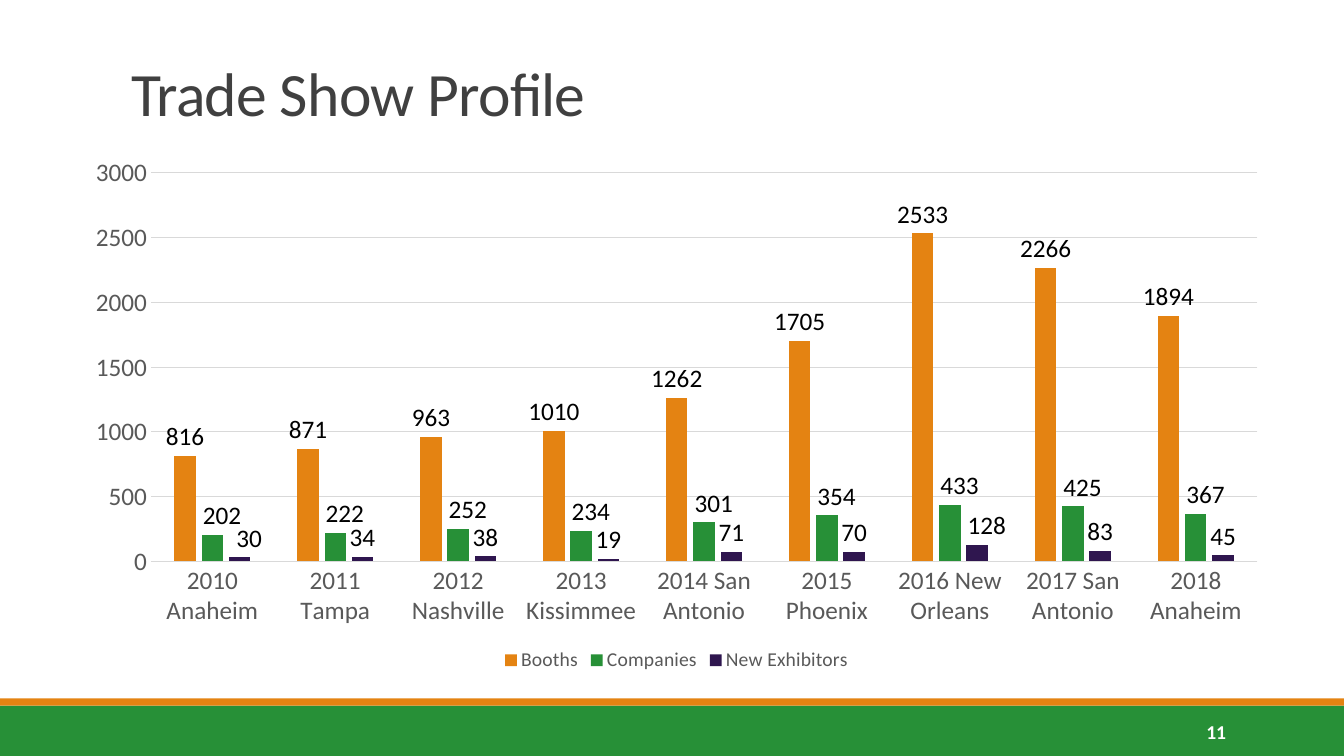
import pptx
import pptx.chart.data
import pptx.dml.color
import pptx.enum.chart
import pptx.enum.shapes
import pptx.enum.text
import pptx.oxml
import pptx.oxml.ns
import pptx.util
from pptx.util import Inches

COLORS = {
    "orange": "E48312",
    "green": "279037",
    "purple": "2F164F",
    "title": "404040",
    "axis": "595959",
    "grid": "D9D9D9",
    "label": "000000",
    "white": "FFFFFF",
}
FONT = "Calibri"
SHOWS = [
    "2010 Anaheim", "2011 Tampa", "2012 Nashville", "2013 Kissimmee", "2014 San Antonio",
    "2015 Phoenix", "2016 New Orleans", "2017 San Antonio", "2018 Anaheim",
]
SERIES = [
    ("Booths", [816, 871, 963, 1010, 1262, 1705, 2533, 2266, 1894], "orange", []),
    ("Companies", [202, 222, 252, 234, 301, 354, 433, 425, 367], "green", range(len(SHOWS))),
    ("New Exhibitors", [30, 34, 38, 19, 71, 70, 128, 83, 45], "purple", [0, 6]),
]
LABEL_SHIFT = 0.008


def rgb(name):
    """Return the named colour."""
    return pptx.dml.color.RGBColor.from_string(COLORS[name])


def style_font(font, size, color):
    """Set typeface, size and colour of a font."""
    font.name = FONT
    font.size = pptx.util.Pt(size)
    font.color.rgb = rgb(color)


def add_band(slide, left, top, width, height, color):
    """Draw one plain filled band."""
    band = slide.shapes.add_shape(
        pptx.enum.shapes.MSO_SHAPE.RECTANGLE,
        Inches(left), Inches(top), Inches(width), Inches(height))
    band.shadow.inherit = False
    band.fill.solid()
    band.fill.fore_color.rgb = rgb(color)
    band.line.fill.background()


def add_footer(slide, left, top, width, height, number):
    """Draw the two footer bands and the slide number."""
    stripe = 0.07
    add_band(slide, left, top + stripe, width, height - stripe, "green")
    add_band(slide, left, top, width, stripe, "orange")
    box = slide.shapes.add_textbox(
        Inches(left + width - 2.5), Inches(top + 0.13), Inches(1.43), Inches(0.4))
    frame = box.text_frame
    frame.word_wrap = True
    frame.vertical_anchor = pptx.enum.text.MSO_ANCHOR.MIDDLE
    paragraph = frame.paragraphs[0]
    paragraph.text = number
    paragraph.alignment = pptx.enum.text.PP_ALIGN.RIGHT
    style_font(paragraph.font, 14, "white")
    paragraph.font.bold = True


def add_title(slide, left, top, width, height, text):
    """Place and format the slide title."""
    title = slide.shapes.title
    title.left, title.top = Inches(left), Inches(top)
    title.width, title.height = Inches(width), Inches(height)
    frame = title.text_frame
    frame.auto_size = pptx.enum.text.MSO_AUTO_SIZE.NONE
    frame.vertical_anchor = pptx.enum.text.MSO_ANCHOR.BOTTOM
    paragraph = frame.paragraphs[0]
    paragraph.text = text
    paragraph.alignment = pptx.enum.text.PP_ALIGN.LEFT
    paragraph.line_spacing = 0.85
    style_font(paragraph.font, 44, "title")
    paragraph.runs[0].font._element.set("spc", "-50")


def style_axes(chart):
    """Format both axes and the gridlines."""
    for axis in (chart.category_axis, chart.value_axis):
        axis.major_tick_mark = pptx.enum.chart.XL_TICK_MARK.NONE
        axis.minor_tick_mark = pptx.enum.chart.XL_TICK_MARK.NONE
        style_font(axis.tick_labels.font, 18, "axis")
    chart.value_axis.minimum_scale = 0
    chart.value_axis.maximum_scale = 3000
    chart.value_axis.major_unit = 500
    chart.value_axis.has_major_gridlines = True
    chart.value_axis.format.line.fill.background()
    for line in (chart.category_axis.format.line,
                 chart.value_axis.major_gridlines.format.line):
        line.color.rgb = rgb("grid")
        line.width = pptx.util.Pt(0.75)


def style_series(series, color, shifted):
    """Colour a series, show its values and move the listed labels to the right."""
    outside_end = pptx.enum.chart.XL_LABEL_POSITION.OUTSIDE_END
    series.format.fill.solid()
    series.format.fill.fore_color.rgb = rgb(color)
    labels = series.data_labels
    labels.show_value = True
    labels.position = outside_end
    style_font(labels.font, 18, "label")
    for index in shifted:
        label = series.points[index].data_label
        style_font(label.font, 18, "label")
        label.position = outside_end
    for element in labels._element.findall(pptx.oxml.ns.qn("c:dLbl")):
        element.insert(1, pptx.oxml.parse_xml(
            f'<c:layout {pptx.oxml.ns.nsdecls("c")}><c:manualLayout>'
            f'<c:x val="{LABEL_SHIFT}"/><c:y val="0"/></c:manualLayout></c:layout>'))


def add_profile_chart(slide, left, top, width, height):
    """Add the clustered columns of exhibitor figures by show."""
    data = pptx.chart.data.CategoryChartData()
    data.categories = SHOWS
    for name, values, _, _ in SERIES:
        data.add_series(name, values)
    chart = slide.shapes.add_chart(
        pptx.enum.chart.XL_CHART_TYPE.COLUMN_CLUSTERED,
        Inches(left), Inches(top), Inches(width), Inches(height), data).chart
    style_font(chart.font, 10, "label")
    chart.has_title = False
    chart.has_legend = True
    chart.legend.position = pptx.enum.chart.XL_LEGEND_POSITION.BOTTOM
    chart.legend.include_in_layout = False
    style_font(chart.legend.font, 14, "axis")
    style_axes(chart)
    plot = chart.plots[0]
    plot.vary_by_categories = False
    plot.gap_width = 219
    plot.overlap = -27
    for series, (_, _, color, shifted) in zip(plot.series, SERIES):
        style_series(series, color, shifted)


def main():
    """Build and save the presentation."""
    presentation = pptx.Presentation()
    presentation.slide_width = Inches(13.33)
    presentation.slide_height = Inches(7.5)
    slide = presentation.slides.add_slide(presentation.slide_layouts[5])
    add_footer(slide, 0, 6.93, 13.33, 0.57, "11")
    add_title(slide, 1.2, 0.31, 11, 1.02, "Trade Show Profile")
    add_profile_chart(slide, 0.71, 1.46, 12, 5.25)
    presentation.save("out.pptx")


if __name__ == "__main__":
    main()
